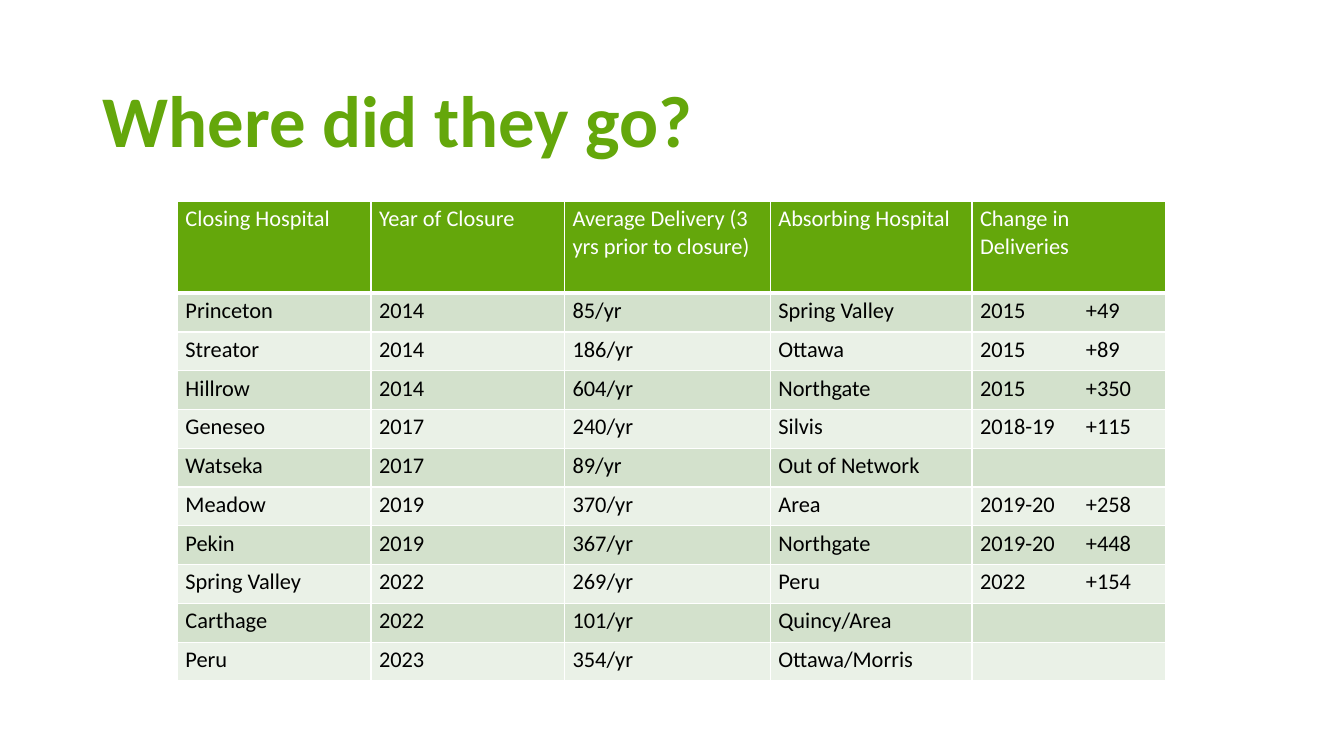
from dataclasses import astuple, dataclass

from lxml import etree
from pptx import Presentation
from pptx import util as u
from pptx.dml.color import RGBColor
from pptx.enum import text
from pptx.oxml.ns import qn

GREEN, WHITE, BLACK = "64A70B", "FFFFFF", "000000"
BANDS = ("D3E1CC", "EAF1E7")
FONT = "Calibri"

# Grid of 160 columns by 90 rows, each a twelfth of an inch
CELL = u.Inches(1) / 12
COL_WIDTHS = (23.04, 23.04, 24.5, 24, 23.04)
HEADER_ROW, BODY_ROW = 10.9, 4.62
TABLE_LEFT, TABLE_TOP = 21.12, 24
CHANGE_TAB = 12.6


@dataclass
class Closure:
    hospital: str
    year: str
    average: str
    absorber: str
    change: str = ""


HEADINGS = Closure("Closing Hospital", "Year of Closure",
                   "Average Delivery (3 yrs prior to closure)",
                   "Absorbing Hospital", "Change in Deliveries")
CLOSURES = [
    Closure("Princeton", "2014", "85/yr", "Spring Valley", "2015\t+49"),
    Closure("Streator", "2014", "186/yr", "Ottawa", "2015\t+89"),
    Closure("Hillrow", "2014", "604/yr", "Northgate", "2015\t+350"),
    Closure("Geneseo", "2017", "240/yr", "Silvis", "2018-19\t+115"),
    Closure("Watseka", "2017", "89/yr", "Out of Network"),
    Closure("Meadow", "2019", "370/yr", "Area", "2019-20\t+258"),
    Closure("Pekin", "2019", "367/yr", "Northgate", "2019-20\t+448"),
    Closure("Spring Valley", "2022", "269/yr", "Peru", "2022\t+154"),
    Closure("Carthage", "2022", "101/yr", "Quincy/Area"),
    Closure("Peru", "2023", "354/yr", "Ottawa/Morris"),
]


def grid(n: float) -> int:
    return u.Emu(round(n * CELL))


def color(value: str) -> RGBColor:
    return RGBColor.from_string(value)


def write(tf, words: str, *, size: float, fill: str, bold: bool = False,
          tab: float = 0, spacing: float = 1.0) -> None:
    p = tf.paragraphs[0]
    if tab:
        tabs = etree.SubElement(p._p.get_or_add_pPr(), qn("a:tabLst"))
        etree.SubElement(tabs, qn("a:tab"), pos=str(grid(tab)), algn="l")
    p.alignment = text.PP_ALIGN.LEFT
    p.line_spacing = spacing
    p.font.size = u.Pt(size)
    if words:
        r = p.add_run()
        r.text = words
        r.font.name, r.font.size, r.font.bold = FONT, u.Pt(size), bold
        r.font.color.rgb = color(fill)


def add_borders(cell, top: float = 1, bottom: float = 1) -> None:
    tc_pr = cell._tc.get_or_add_tcPr()
    widths = {"lnL": 1, "lnR": 1, "lnT": top, "lnB": bottom}
    for i, (side, width) in enumerate(widths.items()):
        ln = etree.Element(qn(f"a:{side}"), w=str(u.Pt(width)))
        solid = etree.SubElement(ln, qn("a:solidFill"))
        etree.SubElement(solid, qn("a:srgbClr"), val=WHITE)
        tc_pr.insert(i, ln)


def add_title(s, words: str) -> None:
    sp = s.shapes.title
    sp.left, sp.top, sp.width, sp.height = map(grid, (11, 7.3, 138, 14.9))
    tf = sp.text_frame
    tf.word_wrap = True
    tf.vertical_anchor = text.MSO_ANCHOR.MIDDLE
    write(tf, words, size=52, fill=GREEN, bold=True, spacing=0.9)


def add_closures(s, rows: list[Closure]) -> None:
    heights = [HEADER_ROW] + [BODY_ROW] * (len(rows) - 1)
    table = s.shapes.add_table(
        len(rows), len(COL_WIDTHS), grid(TABLE_LEFT), grid(TABLE_TOP),
        grid(sum(COL_WIDTHS)), grid(sum(heights))).table
    table.horz_banding = False
    for column, width in zip(table.columns, COL_WIDTHS):
        column.width = grid(width)
    for i, (row, height, closure) in enumerate(zip(table.rows, heights, rows)):
        row.height = grid(height)
        header = i == 0
        for cell, words in zip(row.cells, astuple(closure)):
            cell.margin_left = cell.margin_right = u.Inches(0.08)
            cell.margin_top = cell.margin_bottom = u.Inches(0.04)
            cell.fill.solid()
            cell.fill.fore_color.rgb = color(GREEN if header else BANDS[(i - 1) % 2])
            add_borders(cell, top=3 if i == 1 else 1, bottom=3 if header else 1)
            write(cell.text_frame, words, size=16,
                  fill=WHITE if header else BLACK,
                  tab=CHANGE_TAB if "\t" in words else 0)


def main() -> None:
    prs = Presentation()
    prs.slide_width, prs.slide_height = u.Inches(13.33), u.Inches(7.5)
    s = prs.slides.add_slide(prs.slide_layouts[5])
    add_title(s, "Where did they go?")
    add_closures(s, [HEADINGS, *CLOSURES])
    prs.save("out.pptx")


if __name__ == "__main__":
    main()
